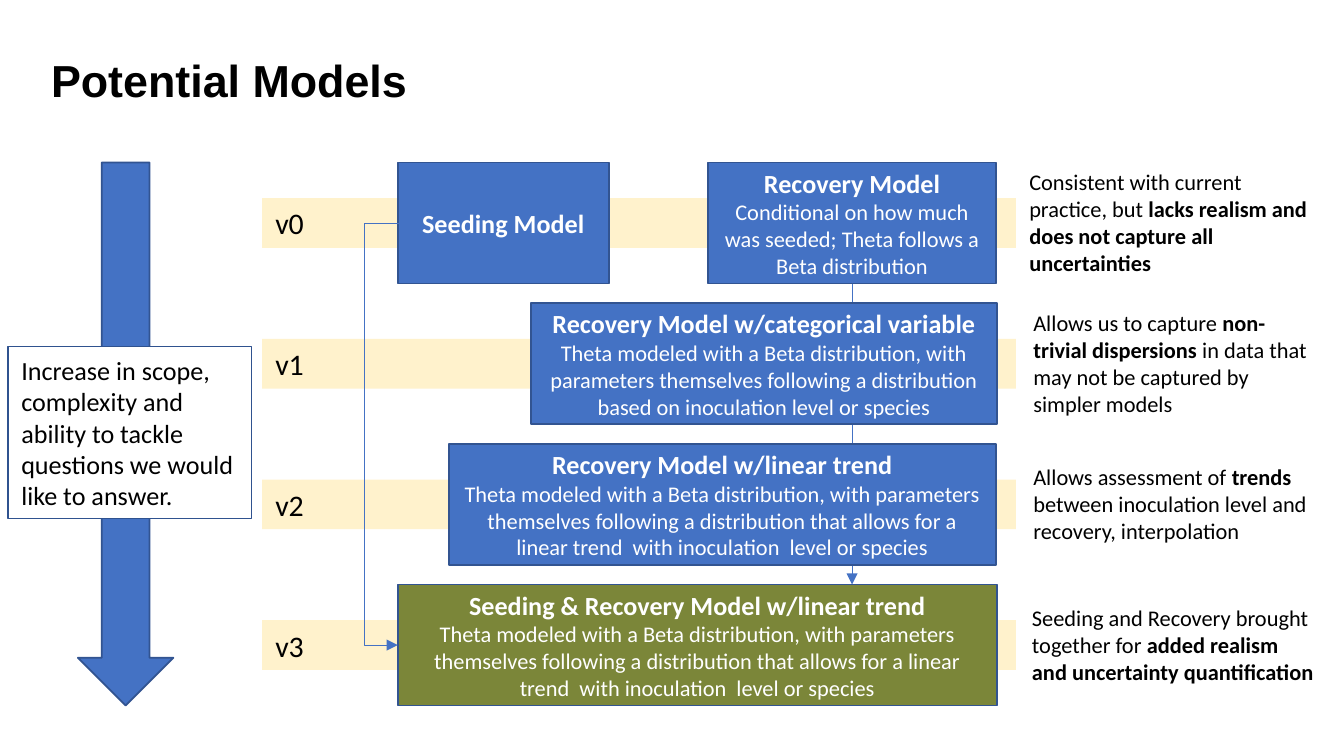
from lxml.etree import SubElement
from pptx import Presentation
from pptx.dml.color import RGBColor
from pptx.enum.shapes import MSO_CONNECTOR, MSO_SHAPE
from pptx.enum.text import MSO_ANCHOR, PP_ALIGN
from pptx.oxml.ns import qn
from pptx.util import Inches, Pt

# Content
TITLE = "Potential Models"
SCOPE = ("Increase in scope, complexity and ability to tackle questions "
         "we would like to answer.")
TREND = ("Theta modeled with a Beta distribution, with parameters themselves following "
         "a distribution that allows for a linear trend  with inoculation  level or species")
BLUE, OLIVE, EDGE, CREAM = "4472C4", "7B8639", "325491", "FFF2CC"
WHITE, BLACK = "FFFFFF", "000000"

# Model boxes: row, left, width, fill, heading, detail
MODELS = [
    (0, 2.96, 1.57, BLUE, "Seeding Model", ""),
    (0, 5.27, 2.14, BLUE, "Recovery Model",
     "Conditional on how much was seeded; Theta follows a Beta distribution"),
    (1, 3.95, 3.47, BLUE, "Recovery Model w/categorical variable",
     "Theta modeled with a Beta distribution, with parameters themselves following "
     "a distribution based on inoculation level or species"),
    (2, 3.34, 4.07, BLUE, "Recovery Model w/linear trend", TREND),
    (3, 2.96, 4.46, OLIVE, "Seeding & Recovery Model w/linear trend", TREND),
]

# Comments, one per row: left, height, runs of (text, bold)
COMMENTS = [
    (7.56, 0.91, [("Consistent with current practice, but ", False),
                  ("lacks realism and does not capture all uncertainties", True)]),
    (7.59, 0.91, [("Allows us to capture ", False), ("non-trivial dispersions", True),
                  (" in data that may not be captured by simpler models", False)]),
    (7.59, 0.71, [("Allows assessment of ", False), ("trends", True),
                  (" between inoculation level and recovery, interpolation", False)]),
    (7.58, 0.71, [("Seeding and Recovery brought together for ", False),
                  ("added realism and uncertainty quantification", True)]),
]

# Row grid
TOP, BOX_H, BAND_H = 1.21, 0.9, 0.37
PITCH = (4.35 - TOP) / 3


def middle(row):
    return TOP + row * PITCH + BOX_H / 2


def color(hex_string):
    return RGBColor.from_string(hex_string)


def add_run(p, text, size, hex_color, bold=False, font="Calibri"):
    r = p.add_run()
    r.text = text
    r.font.name, r.font.size, r.font.bold = font, Pt(size), bold
    r.font.color.rgb = color(hex_color)


def add_box(x, y, w, h, fill, line=None, width=1, kind=MSO_SHAPE.RECTANGLE):
    sp = s.shapes.add_shape(kind, Inches(x), Inches(y), Inches(w), Inches(h))
    sp.shadow.inherit = False
    sp.fill.solid()
    sp.fill.fore_color.rgb = color(fill)
    if line:
        sp.line.color.rgb = color(line)
        sp.line.width = Pt(width)
    else:
        sp.line.fill.background()
    sp.text_frame.word_wrap = True
    sp.text_frame.paragraphs[0].alignment = PP_ALIGN.LEFT
    return sp


def add_arrow(kind, x1, y1, x2, y2):
    cxn = s.shapes.add_connector(kind, Inches(x1), Inches(y1), Inches(x2), Inches(y2))
    cxn.line.color.rgb = color(BLUE)
    cxn.line.width = Pt(0.5)
    SubElement(cxn.line._get_or_add_ln(), qn("a:tailEnd"), type="triangle")
    SubElement(cxn._element.spPr, qn("a:effectLst"))
    return cxn


# Widescreen slide, 16:9
prs = Presentation()
prs.slide_width = Inches(10)
prs.slide_height = Inches(10 * 9 / 16)
s = prs.slides.add_slide(prs.slide_layouts[5])

# Title
title = s.shapes.title
title.left, title.top, title.width, title.height = map(Inches, (0.28, 0.36, 9.31, 0.47))
tf = title.text_frame
tf.vertical_anchor = MSO_ANCHOR.MIDDLE
tf.paragraphs[0].alignment = PP_ALIGN.LEFT
add_run(tf.paragraphs[0], TITLE, 24, BLACK, True, "Arial")

# Recovery arrow, running behind the model boxes
recovery_arrow = add_arrow(MSO_CONNECTOR.STRAIGHT, 6.34, TOP + BOX_H, 6.34, TOP + 3 * PITCH)

# Scope arrow and its label
add_box(0.58, TOP, 0.71, 4.04, BLUE, EDGE, kind=MSO_SHAPE.DOWN_ARROW)
sp = add_box(0.06, 2.58, 1.81, 1.28, WHITE, "2F528F", 0.75)
add_run(sp.text_frame.paragraphs[0], SCOPE, 14, BLACK)

# Version bands
for row in range(4):
    sp = add_box(1.95, middle(row) - BAND_H / 2, 5.61, BAND_H, CREAM)
    add_run(sp.text_frame.paragraphs[0], f"v{row}", 16, BLACK)

# Lift the recovery arrow above the bands
s.shapes._spTree.append(recovery_arrow._element)

# Model boxes
boxes = []
for row, x, w, fill, heading, detail in MODELS:
    sp = add_box(x, TOP + row * PITCH, w, BOX_H, fill, EDGE)
    tf = sp.text_frame
    tf.vertical_anchor = MSO_ANCHOR.MIDDLE
    p = tf.paragraphs[0]
    p.alignment = PP_ALIGN.CENTER
    add_run(p, heading, 14, WHITE, True)
    if detail:
        p = tf.add_paragraph()
        p.alignment = PP_ALIGN.CENTER
        add_run(p, detail, 12, WHITE)
    boxes.append(sp)
recovery_arrow.begin_connect(boxes[1], 2)

# Seeding arrow, bent 0.25 inch out to the left of the boxes
bent = add_arrow(MSO_CONNECTOR.ELBOW, 2.97, middle(0), 2.96, middle(3))
guides = bent._element.spPr.find(qn("a:prstGeom")).get_or_add_avLst()
SubElement(guides, qn("a:gd"), name="adj1", fmla="val 2600000")

# Comments, centred on their rows
for row, (x, h, runs) in enumerate(COMMENTS):
    sp = s.shapes.add_textbox(Inches(x), Inches(middle(row) - h / 2), Inches(2.32), Inches(h))
    sp.text_frame.word_wrap = True
    for text, bold in runs:
        add_run(sp.text_frame.paragraphs[0], text, 12, BLACK, bold)

prs.save("out.pptx")
